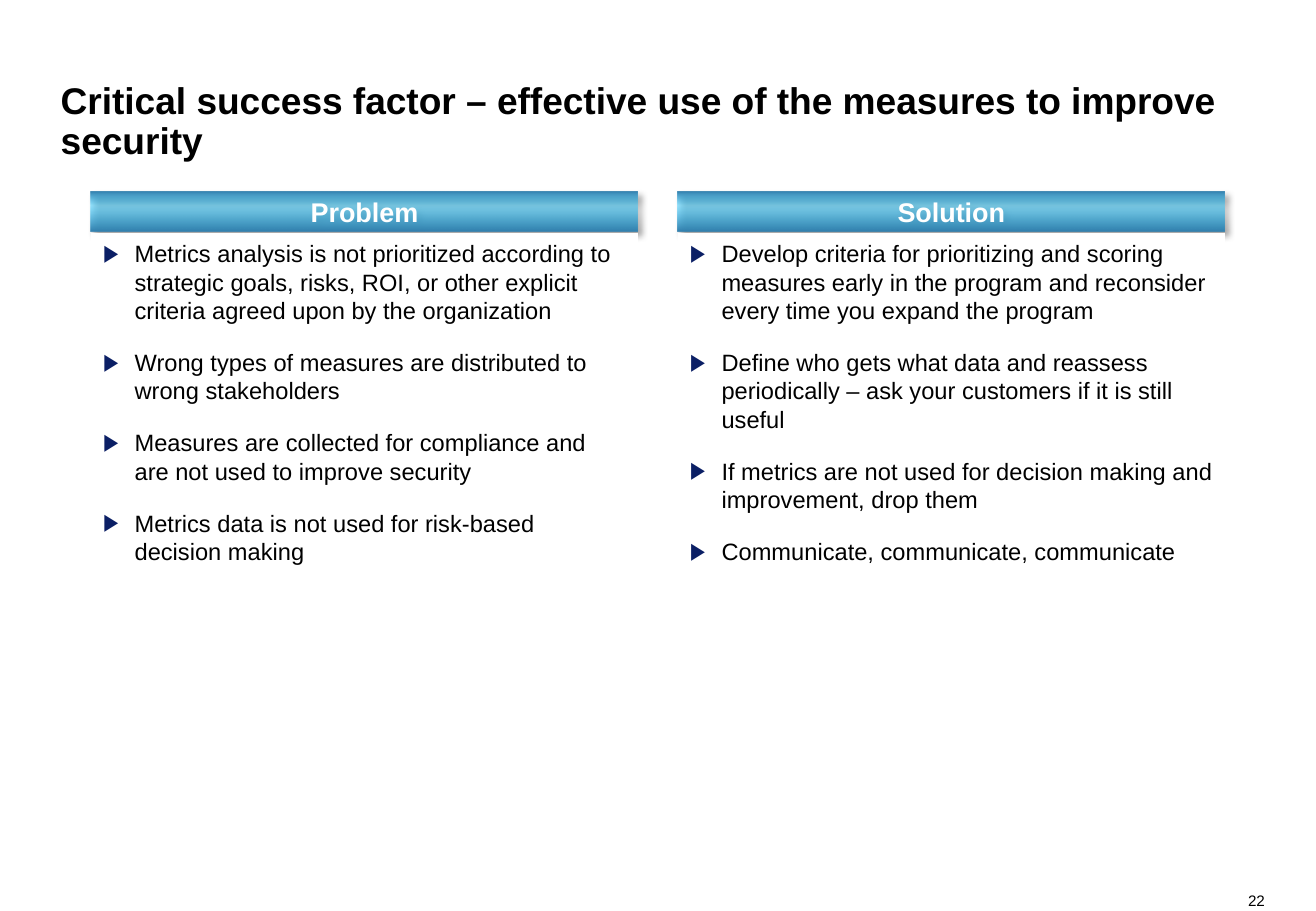
import pptx
import pptx.util
import pptx.oxml
import pptx.oxml.ns
import pptx.dml.color
import pptx.enum.shapes
import pptx.enum.text

Inches, Pt = pptx.util.Inches, pptx.util.Pt
ALIGN, ANCHOR = pptx.enum.text.PP_ALIGN, pptx.enum.text.MSO_ANCHOR
RECTANGLE = pptx.enum.shapes.MSO_SHAPE.RECTANGLE
NS = pptx.oxml.ns.nsdecls("a")

GRADIENT = f"""<a:gradFill {NS} rotWithShape="1"><a:gsLst>
<a:gs pos="0"><a:srgbClr val="327EAC"/></a:gs>
<a:gs pos="35000"><a:srgbClr val="33CAFF"><a:alpha val="51000"/></a:srgbClr></a:gs>
<a:gs pos="100000"><a:srgbClr val="327EAC"/></a:gs>
</a:gsLst><a:lin ang="5400000" scaled="0"/></a:gradFill>"""
SHADOW = f"""<a:outerShdw {NS} blurRad="50800" dist="38100" dir="2700000" algn="tl" rotWithShape="0">
<a:srgbClr val="000000"><a:alpha val="40000"/></a:srgbClr></a:outerShdw>"""
BULLET = (
    f'<a:buClr {NS}><a:srgbClr val="0B1F65"/></a:buClr>',
    f'<a:buFont {NS} typeface="Arial"/>',
    f'<a:buChar {NS} char="▶"/>',
)


def rgb(color):
    return pptx.dml.color.RGBColor.from_string(color)


def style(paragraph, size, color="000000", bold=False, align=ALIGN.LEFT):
    paragraph.alignment = align
    for run in paragraph.runs:
        run.font.name = "Arial"
        run.font.size = Pt(size)
        run.font.bold = bold
        run.font.color.rgb = rgb(color)


prs = pptx.Presentation()
prs.slide_width, prs.slide_height = Inches(10.83), Inches(7.5)
slide = prs.slides.add_slide(prs.slide_layouts[6])

# Title and page number
title = slide.shapes.add_textbox(Inches(0.5), Inches(0.42), Inches(9.83), Inches(0.92)).text_frame
title.text = "Critical success factor – effective use of the measures to improve security"
title.word_wrap = True
title.vertical_anchor = ANCHOR.BOTTOM
title.paragraphs[0].line_spacing = 0.9
style(title.paragraphs[0], 22, bold=True)

page_number = slide.shapes.add_textbox(Inches(10.26), Inches(7.34), Inches(0.15), Inches(0.15)).text_frame
page_number.text = "22"
page_number.word_wrap = False
style(page_number.paragraphs[0], 9, align=ALIGN.RIGHT)

for frame in (title, page_number):
    frame.margin_left = frame.margin_right = frame.margin_top = frame.margin_bottom = 0

# Problem and solution columns
columns = [
    (0.75, "Problem", [
        "Metrics analysis is not prioritized according to strategic goals, risks, ROI, "
        "or other explicit criteria agreed upon by the organization",
        "Wrong types of measures are distributed to wrong stakeholders",
        "Measures are collected for compliance and are not used to improve security",
        "Metrics data is not used for risk-based decision making",
    ]),
    (5.58, "Solution", [
        "Develop criteria for prioritizing and scoring measures early in the program "
        "and reconsider every time you expand the program",
        "Define who gets what data and reassess periodically – ask your customers if it is still useful",
        "If metrics are not used for decision making and improvement, drop them",
        "Communicate, communicate, communicate",
    ]),
]
for left, heading, points in columns:
    # Heading bar with gradient and shadow
    bar = slide.shapes.add_shape(RECTANGLE, Inches(left), Inches(1.58), Inches(4.5), Inches(0.33))
    bar.line.fill.background()
    bar.shadow.inherit = False
    properties = bar._element.spPr
    properties.find(pptx.oxml.ns.qn("a:prstGeom")).addnext(pptx.oxml.parse_xml(GRADIENT))
    properties.find(pptx.oxml.ns.qn("a:effectLst")).append(pptx.oxml.parse_xml(SHADOW))
    bar.text_frame.text = heading
    bar.text_frame.vertical_anchor = ANCHOR.MIDDLE
    style(bar.text_frame.paragraphs[0], 16, "FFFFFF", True, ALIGN.CENTER)

    # Bulleted points below the bar
    panel = slide.shapes.add_shape(RECTANGLE, Inches(left), Inches(1.92), Inches(4.5), Inches(3.25))
    panel.fill.solid()
    panel.fill.fore_color.rgb = rgb("FFFFFF")
    panel.line.fill.background()
    panel.shadow.inherit = False
    panel.text_frame.text = "\n".join(points)
    panel.text_frame.word_wrap = True
    panel.text_frame.vertical_anchor = ANCHOR.TOP
    for index, point in enumerate(panel.text_frame.paragraphs):
        indent = point._p.get_or_add_pPr()
        indent.set("marL", str(Inches(0.26)))
        indent.set("indent", str(-Inches(0.26)))
        for element in BULLET:
            indent.append(pptx.oxml.parse_xml(element))
        point.space_before = Pt(14 if index else 0)
        style(point, 14)

prs.save("out.pptx")
